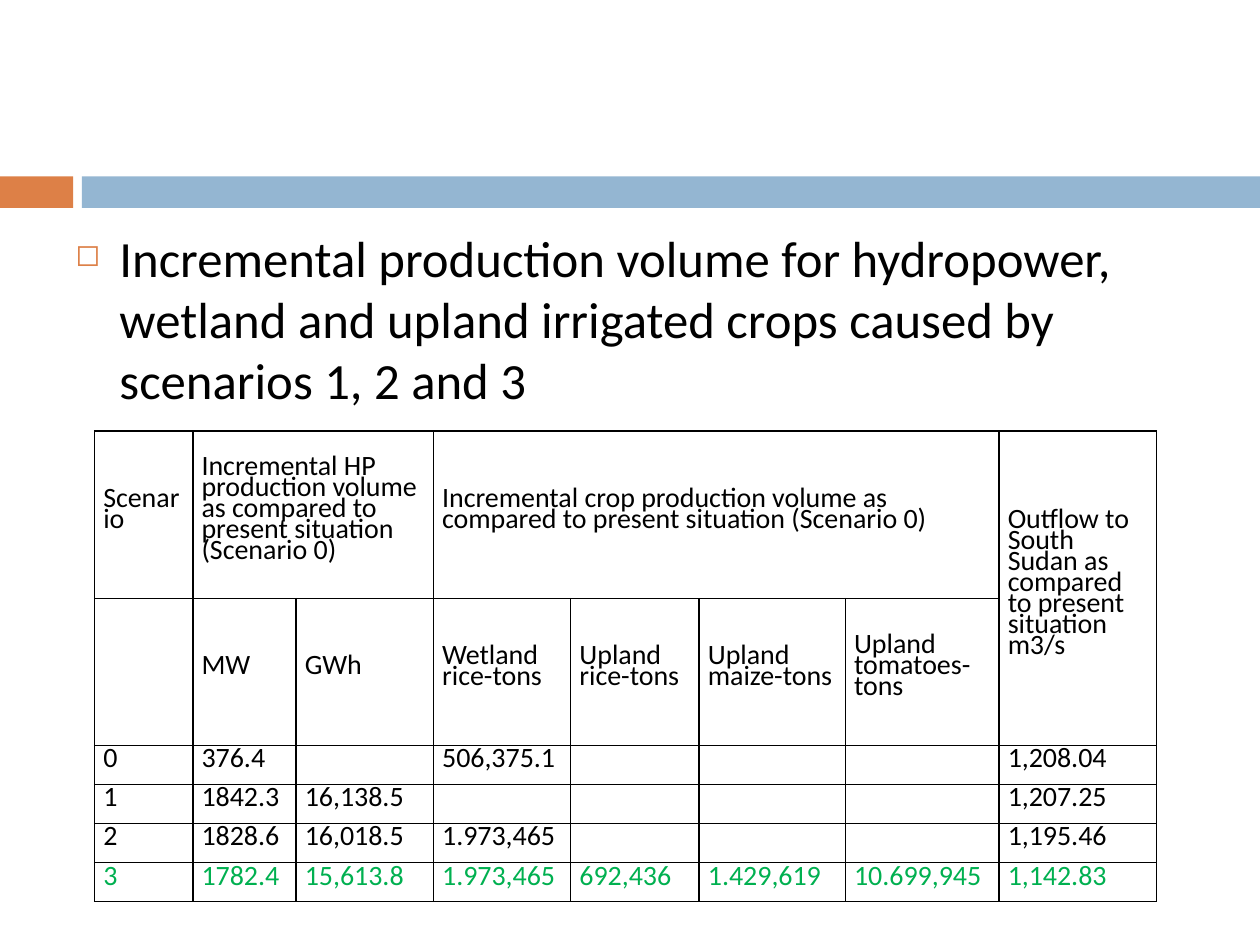
import pptx
import pptx.dml.color
import pptx.enum.shapes
import pptx.enum.text
import pptx.oxml
import pptx.oxml.ns
import pptx.util

RGBColor = pptx.dml.color.RGBColor
BLACK = RGBColor(0x00, 0x00, 0x00)
GREEN = RGBColor(0x00, 0xB0, 0x50)
ORANGE = RGBColor(0xDD, 0x80, 0x47)
BLUE = RGBColor(0x94, 0xB6, 0xD2)

WIDTH, HEIGHT = pptx.util.Inches(10), pptx.util.Inches(7.5)
BAND_TOP, BAND_HEIGHT = 1.4, 0.25
COLUMNS = [0.78, 0.82, 1.09, 1.09, 1.02, 1.16, 1.22, 1.25]
ROWS = [1.33, 0.94] + [0.31] * 4
TAB_STOPS = [0.59, 1.97, 2.17, 2.66]
MERGES = [(0, 1, 0, 2), (0, 3, 0, 6), (0, 7, 1, 7)]

HEADLINE = ("Incremental production volume for hydropower, wetland and upland "
            "irrigated crops caused by scenarios 1, 2 and 3")
VOLUMES = [
    ["Scenario",
     "Incremental HP production volume as compared to present situation (Scenario 0)", "",
     "Incremental crop production volume as compared to present situation (Scenario 0)",
     "", "", "", "Outflow to South Sudan as compared to present situation m3/s"],
    ["", "MW", "GWh", "Wetland rice-tons", "Upland rice-tons", "Upland maize-tons",
     "Upland tomatoes-tons", ""],
    ["0", "376.4", "", "506,375.1", "", "", "", "1,208.04"],
    ["1", "1842.3", "16,138.5", "", "", "", "", "1,207.25"],
    ["2", "1828.6", "16,018.5", "1.973,465", "", "", "", "1,195.46"],
    ["3", "1782.4", "15,613.8", "1.973,465", "692,436", "1.429,619", "10.699,945",
     "1,142.83"],
]

CELL_FORMAT = {
    "margin_left": pptx.util.Inches(0.07),
    "margin_right": pptx.util.Inches(0.07),
    "margin_top": 0,
    "margin_bottom": 0,
    "vertical_anchor": pptx.enum.text.MSO_ANCHOR.MIDDLE,
}
PLAIN_TABLE = {"first_row": False, "horz_banding": False}
HEADLINE_SPACING = {"space_before": pptx.util.Pt(12), "space_after": pptx.util.Pt(6)}


def apply_format(target, values):
    for name, value in values.items():
        setattr(target, name, value)


def place(left, top, width, height):
    return [pptx.util.Inches(length) for length in (left, top, width, height)]


def xml_element(markup):
    return pptx.oxml.parse_xml(
        markup.replace(" ", f" {pptx.oxml.ns.nsdecls('a')} ", 1))


def write(paragraph, text, size, color):
    run = paragraph.add_run()
    run.text = text
    apply_format(run.font, {"size": pptx.util.Pt(size), "name": "Calibri"})
    run.font.color.rgb = color


def add_band(slide, left, width, color):
    band = slide.shapes.add_shape(
        pptx.enum.shapes.MSO_SHAPE.RECTANGLE, *place(left, BAND_TOP, width, BAND_HEIGHT))
    band.shadow.inherit = False
    band.fill.solid()
    band.fill.fore_color.rgb = color
    band.line.fill.background()


def add_headline(slide):
    headline = slide.shapes.add_textbox(*place(0.5, 1.75, 9, 4.95)).text_frame
    headline.word_wrap = True
    paragraph = headline.paragraphs[0]
    write(paragraph, HEADLINE, 29, BLACK)
    apply_format(paragraph, HEADLINE_SPACING)
    properties = paragraph._p.get_or_add_pPr()
    hang = pptx.util.Inches(0.35)
    properties.set("marL", str(hang))
    properties.set("indent", str(-hang))
    for markup in (f'<a:buClr ><a:srgbClr val="{ORANGE}"/></a:buClr>',
                   '<a:buSzPct val="60000"/>',
                   '<a:buChar char="◻"/>'):
        properties.append(xml_element(markup))


def add_borders(cell):
    properties = cell._tc.get_or_add_tcPr()
    for position, side in enumerate("LRTB"):
        properties.insert(position, xml_element(
            f'<a:ln{side} w="{pptx.util.Pt(1)}"><a:solidFill>'
            f'<a:srgbClr val="{BLACK}"/></a:solidFill></a:ln{side}>'))


def fill_cell(cell, text, color):
    apply_format(cell, CELL_FORMAT)
    cell.fill.background()
    add_borders(cell)
    paragraph = cell.text_frame.paragraphs[0]
    paragraph.line_spacing = pptx.util.Pt(12)
    if text:
        write(paragraph, text, 16, color)
        stops = "".join(f'<a:tab pos="{pptx.util.Inches(stop)}" algn="l"/>'
                        for stop in TAB_STOPS)
        paragraph._p.get_or_add_pPr().append(
            xml_element(f"<a:tabLst >{stops}</a:tabLst>"))


def add_volume_table(slide):
    table = slide.shapes.add_table(
        len(ROWS), len(COLUMNS), *place(0.75, 3.42, sum(COLUMNS), sum(ROWS))).table
    apply_format(table, PLAIN_TABLE)
    for column, width in zip(table.columns, COLUMNS):
        column.width = pptx.util.Inches(width)
    for row, height in zip(table.rows, ROWS):
        row.height = pptx.util.Inches(height)
    for row_index, volumes in enumerate(VOLUMES):
        color = GREEN if row_index == len(VOLUMES) - 1 else BLACK
        for column_index, text in enumerate(volumes):
            fill_cell(table.cell(row_index, column_index), text, color)
    for top, left, bottom, right in MERGES:
        table.cell(top, left).merge(table.cell(bottom, right))


def main():
    presentation = pptx.Presentation()
    apply_format(presentation, {"slide_width": WIDTH, "slide_height": HEIGHT})
    slide = presentation.slides.add_slide(presentation.slide_layouts[6])
    add_band(slide, 0, 0.58, ORANGE)
    add_band(slide, 0.65, 9.35, BLUE)
    add_headline(slide)
    add_volume_table(slide)
    presentation.save("out.pptx")


if __name__ == "__main__":
    main()
